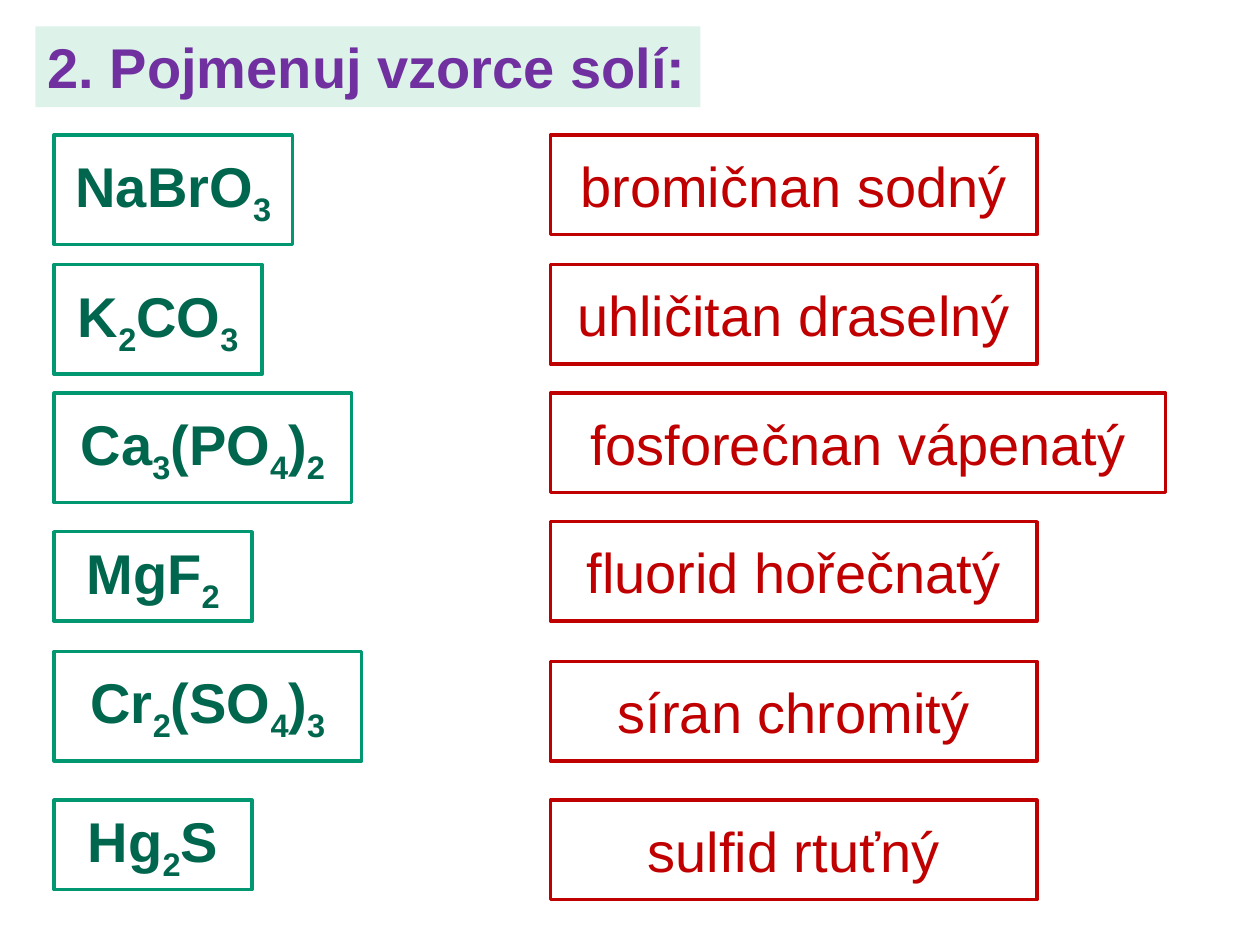
import itertools

import pptx
import pptx.dml.color
import pptx.enum.shapes
import pptx.enum.text
import pptx.util

Inches = pptx.util.Inches
Align = pptx.enum.text.PP_ALIGN
Anchor = pptx.enum.text.MSO_ANCHOR

COLORS = {
    "white": "FFFFFF",
    "mint": "DDF3EA",
    "purple": "7030A0",
    "green_line": "009771",
    "green_text": "00664D",
    "red": "C00000",
}

HEADING = "2. Pojmenuj vzorce solí:"

# formula, its top, width, height; name, its top, width (inches)
SALTS = [
    ("NaBrO3", 1.07, 1.89, 0.87, "bromičnan sodný", 1.07, 3.86),
    ("K2CO3", 2.1, 1.65, 0.87, "uhličitan draselný", 2.1, 3.86),
    ("Ca3(PO4)2", 3.12, 2.36, 0.87, "fosforečnan vápenatý", 3.12, 4.88),
    ("MgF2", 4.22, 1.57, 0.71, "fluorid hořečnatý", 4.14, 3.86),
    ("Cr2(SO4)3", 5.17, 2.44, 0.87, "síran chromitý", 5.25, 3.86),
    ("Hg2S", 6.35, 1.57, 0.71, "sulfid rtuťný", 6.35, 3.86),
]
FORMULA_LEFT, NAME_LEFT, NAME_HEIGHT = 0.43, 4.37, 0.79


def rgb(name):
    return pptx.dml.color.RGBColor.from_string(COLORS[name])


def add_box(slide, place, fill, line, color, bold, align=Align.CENTER, anchor=Anchor.MIDDLE):
    """Draw a rectangle and return its styled, still empty paragraph."""
    box = slide.shapes.add_shape(
        pptx.enum.shapes.MSO_SHAPE.RECTANGLE, *(Inches(n) for n in place))
    box.shadow.inherit = False
    box.fill.solid()
    box.fill.fore_color.rgb = rgb(fill)
    if line:
        box.line.color.rgb = rgb(line)
        box.line.width = pptx.util.Pt(2)
    else:
        box.line.fill.background()
    box.text_frame.word_wrap = True
    box.text_frame.vertical_anchor = anchor
    paragraph = box.text_frame.paragraphs[0]
    paragraph.alignment = align
    font = paragraph.font
    font.name, font.size, font.bold = "Arial", pptx.util.Pt(32), bold
    font.color.rgb = rgb(color)
    return paragraph


def add_formula(paragraph, formula):
    """Write a chemical formula with its digits as subscripts."""
    for is_index, symbols in itertools.groupby(formula, str.isdigit):
        run = paragraph.add_run()
        run.text = "".join(symbols)
        if is_index:
            run.font._element.set("baseline", "-25000")


def main():
    deck = pptx.Presentation()
    deck.slide_width, deck.slide_height = Inches(10), Inches(7.5)
    slide = deck.slides.add_slide(deck.slide_layouts[6])

    # Heading
    heading = add_box(slide, (0.28, 0.21, 5.28, 0.64), "mint", None, "purple", True,
                      Align.LEFT, Anchor.TOP)
    heading.add_run().text = HEADING

    # Formulas on the left, names on the right
    for formula, top, width, height, name, name_top, name_width in SALTS:
        add_formula(add_box(slide, (FORMULA_LEFT, top, width, height),
                            "white", "green_line", "green_text", True), formula)
        answer = add_box(slide, (NAME_LEFT, name_top, name_width, NAME_HEIGHT),
                         "white", "red", "red", False)
        answer.add_run().text = name

    deck.save("out.pptx")


if __name__ == "__main__":
    main()
